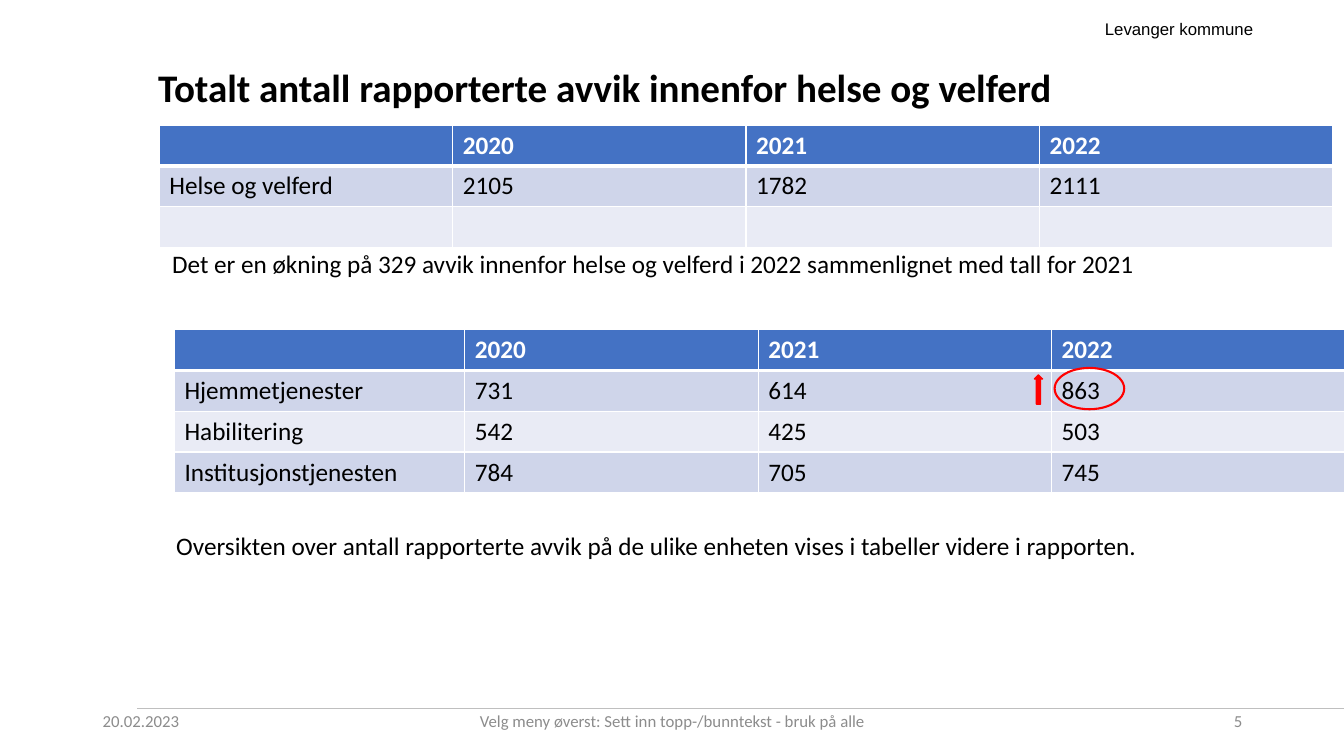
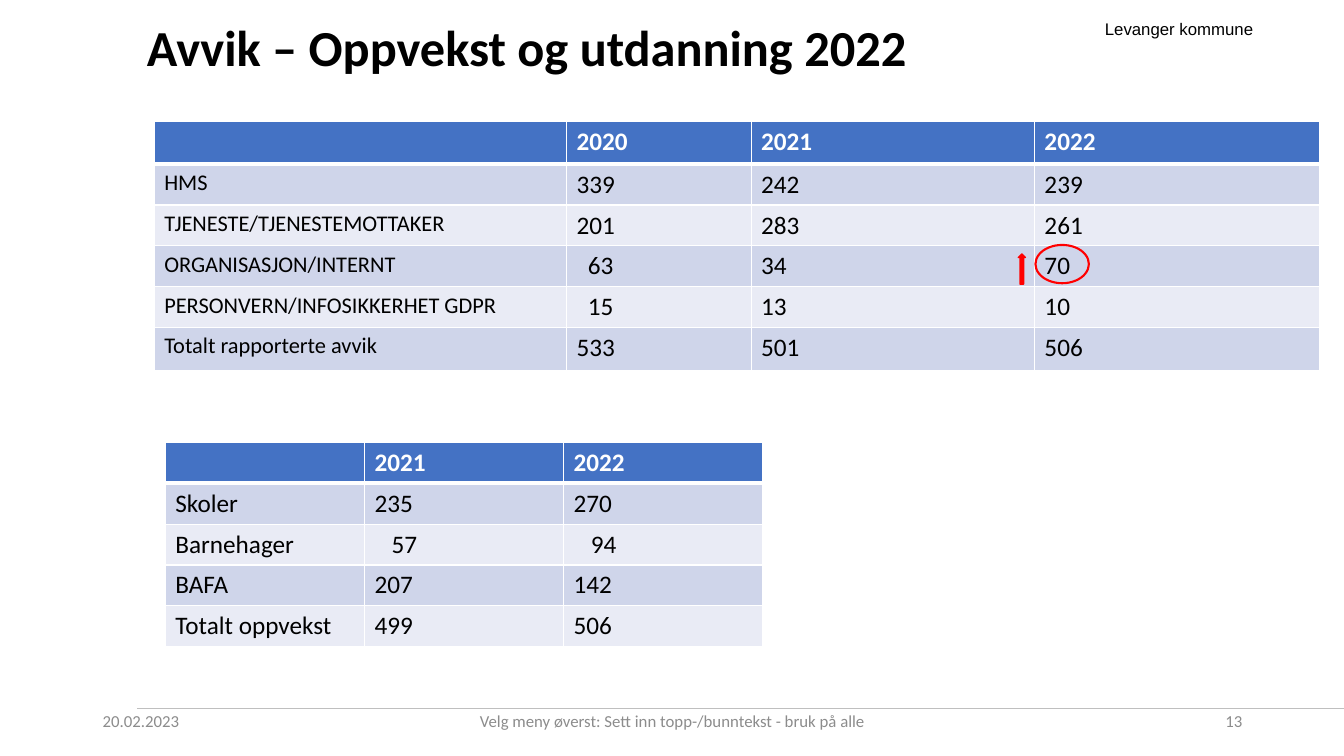
from dataclasses import dataclass

from lxml import etree
from pptx import Presentation
from pptx.dml.color import RGBColor
from pptx.enum import shapes, text
from pptx.oxml import ns
from pptx.util import Inches, Pt


@dataclass(frozen=True)
class Theme:
    black: str = "000000"
    white: str = "FFFFFF"
    header: str = "4472C4"
    bands: tuple = ("CFD5EA", "E9EBF5")
    grey: str = "8C8C8C"
    rule: str = "BFBFBF"
    mark: str = "FF0000"
    font: str = "Calibri"
    brand_font: str = "Arial"
    body: float = 18
    label: float = 16
    small: float = 12


theme = Theme()
Align = text.PP_ALIGN


def add_text(slide, words, box, size, color=theme.black, font=theme.font, bold=False,
             align=Align.LEFT, anchor=text.MSO_ANCHOR.TOP):
    shape = slide.shapes.add_textbox(*map(Inches, box))
    frame = shape.text_frame
    frame.word_wrap = True
    frame.vertical_anchor = anchor
    paragraph = frame.paragraphs[0]
    paragraph.text = words
    paragraph.alignment = align
    paragraph.font.size = Pt(size)
    paragraph.font.name = font
    paragraph.font.bold = bold
    paragraph.font.color.rgb = RGBColor.from_string(color)
    return shape


def add_grid(slide, left, top, widths, heights, rows, label_size=theme.body, indents=None):
    """Add a banded table; indents maps (row, column) to extra left margin in inches."""
    table = slide.shapes.add_table(len(rows), len(widths), Inches(left), Inches(top),
                                   Inches(sum(widths)), Inches(sum(heights))).table
    for column, width in zip(table.columns, widths):
        column.width = Inches(width)
    for row, (height, values) in enumerate(zip(heights, rows)):
        table.rows[row].height = Inches(height)
        is_header = row == 0
        for column, value in enumerate(values):
            cell = table.cell(row, column)
            cell.margin_left = Inches(0.1 + (indents or {}).get((row, column), 0))
            paragraph = cell.text_frame.paragraphs[0]
            paragraph.text = value
            is_label = column == 0 and not is_header
            paragraph.font.size = Pt(label_size if is_label else theme.body)
            paragraph.font.name = theme.font
            paragraph.font.bold = is_header
            paragraph.font.color.rgb = RGBColor.from_string(theme.white if is_header else theme.black)
            properties = cell._tc.get_or_add_tcPr()
            weights = {"L": 1, "R": 1, "T": 3 if row == 1 else 1, "B": 3 if is_header else 1}
            for side, weight in weights.items():
                line = etree.SubElement(properties, ns.qn(f"a:ln{side}"), w=str(Pt(weight)))
                fill = etree.SubElement(line, ns.qn("a:solidFill"))
                etree.SubElement(fill, ns.qn("a:srgbClr"), val=theme.white)
            cell.fill.solid()
            cell.fill.fore_color.rgb = RGBColor.from_string(
                theme.header if is_header else theme.bands[(row - 1) % 2])


presentation = Presentation()
presentation.slide_width = Inches(13.33)
presentation.slide_height = Inches(7.5)

row_height = 0.405
years = ["2020", "2021", "2022"]
pages = [
    {
        "title": ("Totalt antall rapporterte avvik innenfor helse og velferd", (1.47, 0.59, 11.26, 0.6), 27.9),
        "number": "5",
        "tables": [
            dict(left=1.58, top=1.24, widths=[2.91] * 4, heights=[row_height] * 3, rows=[
                ["", *years],
                ["Helse og velferd", "2105", "1782", "2111"],
                [""] * 4,
            ]),
            dict(left=1.73, top=3.27, widths=[2.88] + [2.91] * 3, heights=[row_height] * 4, rows=[
                ["", *years],
                ["Hjemmetjenester", "731", "614", "863"],
                ["Habilitering", "542", "425", "503"],
                ["Institusjonstjenesten", "784", "705", "745"],
            ]),
        ],
        "notes": [
            ("Det er en økning på 329 avvik innenfor helse og velferd i 2022 sammenlignet med tall for 2021",
             (1.61, 2.41, 11.64, 0.4)),
            ("Oversikten over antall rapporterte avvik på de ulike enheten vises i tabeller videre i rapporten.",
             (1.65, 5.21, 11.57, 0.4)),
        ],
        "ring": (10.46, 3.65, 0.69, 0.41),
        "arrow": (10.26, 3.72, 0.08, 0.29),
    },
    {
        "title": ("Avvik – Oppvekst og utdanning 2022", (1.36, 0.2, 11.64, 0.6), 36),
        "number": "13",
        "tables": [
            dict(left=1.53, top=1.2, widths=[4.09, 1.83, 2.81, 2.83],
                 heights=[0.43] + [row_height] * 4 + [0.43], label_size=theme.label,
                 indents={(3, 1): 0.11, (4, 1): 0.11}, rows=[
                ["", *years],
                ["HMS", "339", "242", "239"],
                ["TJENESTE/TJENESTEMOTTAKER", "201", "283", "261"],
                ["ORGANISASJON/INTERNT", "63", "34", "70"],
                ["PERSONVERN/INFOSIKKERHET GDPR", "15", "13", "10"],
                ["Totalt rapporterte avvik", "533", "501", "506"],
            ]),
            dict(left=1.64, top=4.39, widths=[1.975] * 3, heights=[row_height] * 5,
                 indents={(2, 1): 0.17, (2, 2): 0.17}, rows=[
                ["", *years[1:]],
                ["Skoler", "235", "270"],
                ["Barnehager", "57", "94"],
                ["BAFA", "207", "142"],
                ["Totalt oppvekst", "499", "506"],
            ]),
        ],
        "notes": [],
        "ring": (10.27, 2.43, 0.53, 0.38),
        "arrow": (10.1, 2.52, 0.07, 0.3),
    },
]

for page in pages:
    slide = presentation.slides.add_slide(presentation.slide_layouts[6])

    rule = slide.shapes.add_connector(shapes.MSO_CONNECTOR.STRAIGHT, Inches(1.36), Inches(7.03),
                                      Inches(13.33), Inches(7.03))
    rule.line.color.rgb = RGBColor.from_string(theme.rule)
    rule.line.width = Pt(0.25)
    etree.SubElement(rule._element.spPr, ns.qn("a:effectLst"))

    brand = add_text(slide, "Levanger kommune", (10.86, 0.19, 2.41, 0.42), theme.small,
                     font=theme.brand_font)
    brand.text_frame.margin_top = 0

    words, box, size = page["title"]
    title = add_text(slide, words, box, size, bold=True, anchor=text.MSO_ANCHOR.MIDDLE)
    title.text_frame.paragraphs[0].line_spacing = 0.9

    footers = [
        ("20.02.2023", 0.92, 3, Align.LEFT),
        ("Velg meny øverst: Sett inn topp-/bunntekst - bruk på alle", 4.42, 4.5, Align.CENTER),
        (page["number"], 9.42, 3, Align.RIGHT),
    ]
    for words, left, width, align in footers:
        add_text(slide, words, (left, 6.95, width, 0.4), theme.small, theme.grey,
                 align=align, anchor=text.MSO_ANCHOR.MIDDLE)

    for table in page["tables"]:
        add_grid(slide, **table)
    for words, box in page["notes"]:
        add_text(slide, words, box, theme.body)

    ring = slide.shapes.add_shape(shapes.MSO_SHAPE.OVAL, *map(Inches, page["ring"]))
    ring.fill.background()
    ring.line.width = Pt(1.5)
    arrow = slide.shapes.add_shape(shapes.MSO_SHAPE.UP_ARROW, *map(Inches, page["arrow"]))
    arrow.fill.solid()
    arrow.fill.fore_color.rgb = RGBColor.from_string(theme.mark)
    arrow.line.width = Pt(1)
    for shape in (ring, arrow):
        shape.shadow.inherit = False
        shape.line.color.rgb = RGBColor.from_string(theme.mark)

presentation.save("out.pptx")
